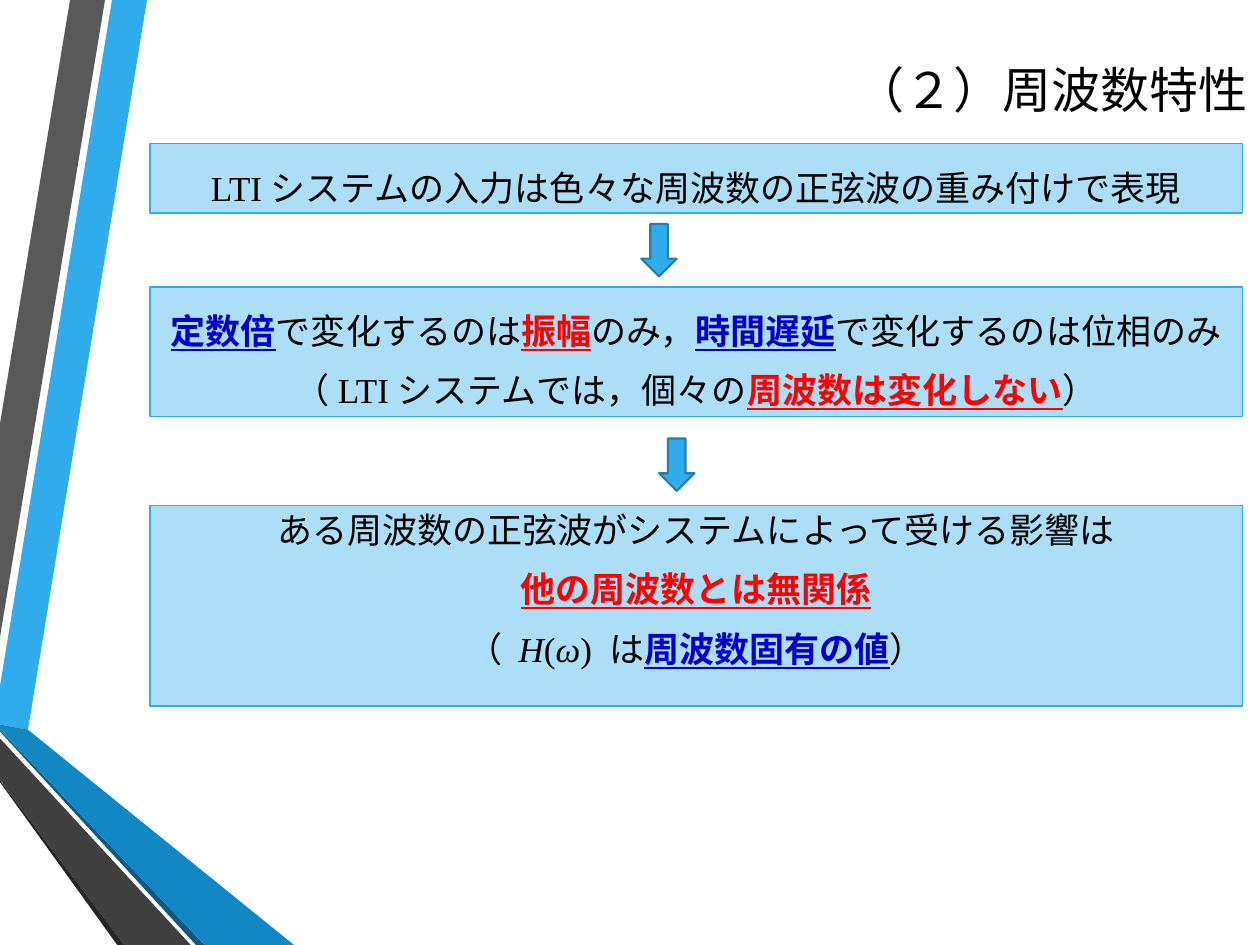
from pptx import Presentation
from pptx.dml.color import RGBColor
from pptx.enum.shapes import MSO_SHAPE as Kind
from pptx.enum.text import MSO_ANCHOR as Anchor, PP_ALIGN as Align
from pptx.util import Pt

BLACK, BLUE, RED = "000000", "0000CC", "FF0000"
SKY = "30ACEC"


def color(code):
    return RGBColor.from_string(code)


def plain(text):
    return text, BLACK, False, False


def key(text, code):
    """An emphasised run: bold, underlined and coloured."""
    return text, code, True, False


def math(text):
    return text, BLACK, False, True


class Deck:
    font = "Times New Roman"
    size = 20
    left, width = 85.7, 624.2

    def __init__(self):
        self.prs = Presentation()
        self.prs.slide_width, self.prs.slide_height = Pt(720), Pt(540)
        self.slide = self.prs.slides.add_slide(self.prs.slide_layouts[5])

    def paint(self, shape, fill, line=None, weight=0.75):
        shape.shadow.inherit = False
        shape.fill.solid()
        shape.fill.fore_color.rgb = color(fill)
        if line:
            shape.line.color.rgb = color(line)
            shape.line.width = Pt(weight)
        else:
            shape.line.fill.background()

    def band(self, fill, points):
        """Draw a closed polygon of the side ornament."""
        pen = self.slide.shapes.build_freeform(*points[0], scale=Pt(1))
        pen.add_line_segments(points[1:], close=True)
        self.paint(pen.convert_to_shape(), fill)

    def title(self, text):
        head = self.slide.shapes.title
        head.left, head.top, head.width, head.height = Pt(113), Pt(0), Pt(607), Pt(102)
        head.text_frame.vertical_anchor = Anchor.MIDDLE
        para = head.text_frame.paragraphs[0]
        para.alignment = Align.RIGHT
        run = para.add_run()
        run.text = text
        run.font.name, run.font.size = "Calibri", Pt(28)
        run.font.color.rgb = color(BLACK)

    def box(self, top, height, lead, lines):
        """Add a text panel; each line is a list of (text, colour, strong, italic)."""
        shape = self.slide.shapes.add_shape(
            Kind.RECTANGLE, Pt(self.left), Pt(top), Pt(self.width), Pt(height))
        self.paint(shape, "ACDEF7", SKY)
        frame = shape.text_frame
        frame.word_wrap = True
        frame.vertical_anchor = Anchor.TOP
        for i, runs in enumerate(lines):
            para = frame.add_paragraph() if i else frame.paragraphs[0]
            para.alignment = Align.CENTER
            para.line_spacing = Pt(lead)
            para.space_before = Pt(6 if i else 0)
            para.space_after = Pt(6)
            for text, code, strong, slant in runs:
                run = para.add_run()
                run.text = text
                font = run.font
                font.name, font.size = self.font, Pt(self.size)
                font.bold = font.underline = strong
                font.italic = slant
                font.color.rgb = color(code)

    def arrow(self, left, top):
        shape = self.slide.shapes.add_shape(
            Kind.DOWN_ARROW, Pt(left), Pt(top), Pt(20.2), Pt(29.9))
        self.paint(shape, SKY, "247FAF", 1.25)

    def save(self):
        self.prs.save("out.pptx")


def main():
    deck = Deck()
    bands = [
        (SKY, [(0, 391.7), (0, 414), (15.8, 416.9), (84.4, 0), (64.1, 0)]),
        ("595959", [(59.8, 0), (39.6, 0), (0, 241.9), (0, 364.3)]),
        ("262626", [(0, 445.7), (0, 447.1), (67, 540), (71.3, 540)]),
        ("0C5A82", [(0, 416.9), (0, 417.6), (112.3, 540), (117.4, 540)]),
        ("1287C3", [(0, 416.9), (117.4, 540), (167.8, 540), (15.8, 416.9), (0, 414)]),
        ("404040", [(0, 445.7), (71.3, 540), (108.7, 540), (0, 421.9)]),
    ]
    for fill, points in bands:
        deck.band(fill, points)

    deck.title("（２）周波数特性")
    deck.box(82, 39.8, 33.6, [
        [plain("LTIシステムの入力は色々な周波数の正弦波の重み付けで表現")],
    ])
    deck.arrow(366.5, 128)
    deck.box(164, 74.2, 33.6, [
        [key("定数倍", BLUE), plain("で変化するのは"), key("振幅", RED),
         plain("のみ，"), key("時間遅延", BLUE),
         plain("で変化するのは位相のみ（LTIシステムでは，個々の"),
         key("周波数は変化しない", RED), plain("）")],
    ])
    deck.arrow(376.6, 250.6)
    deck.box(289, 114.5, 22, [
        [plain("ある周波数の正弦波がシステムによって受ける影響は")],
        [key("他の周波数とは無関係", RED)],
        [plain("（ "), math("H"), plain("("), math("ω"), plain(") は"),
         key("周波数固有の値", BLUE), plain("）")],
    ])
    deck.save()


if __name__ == "__main__":
    main()
